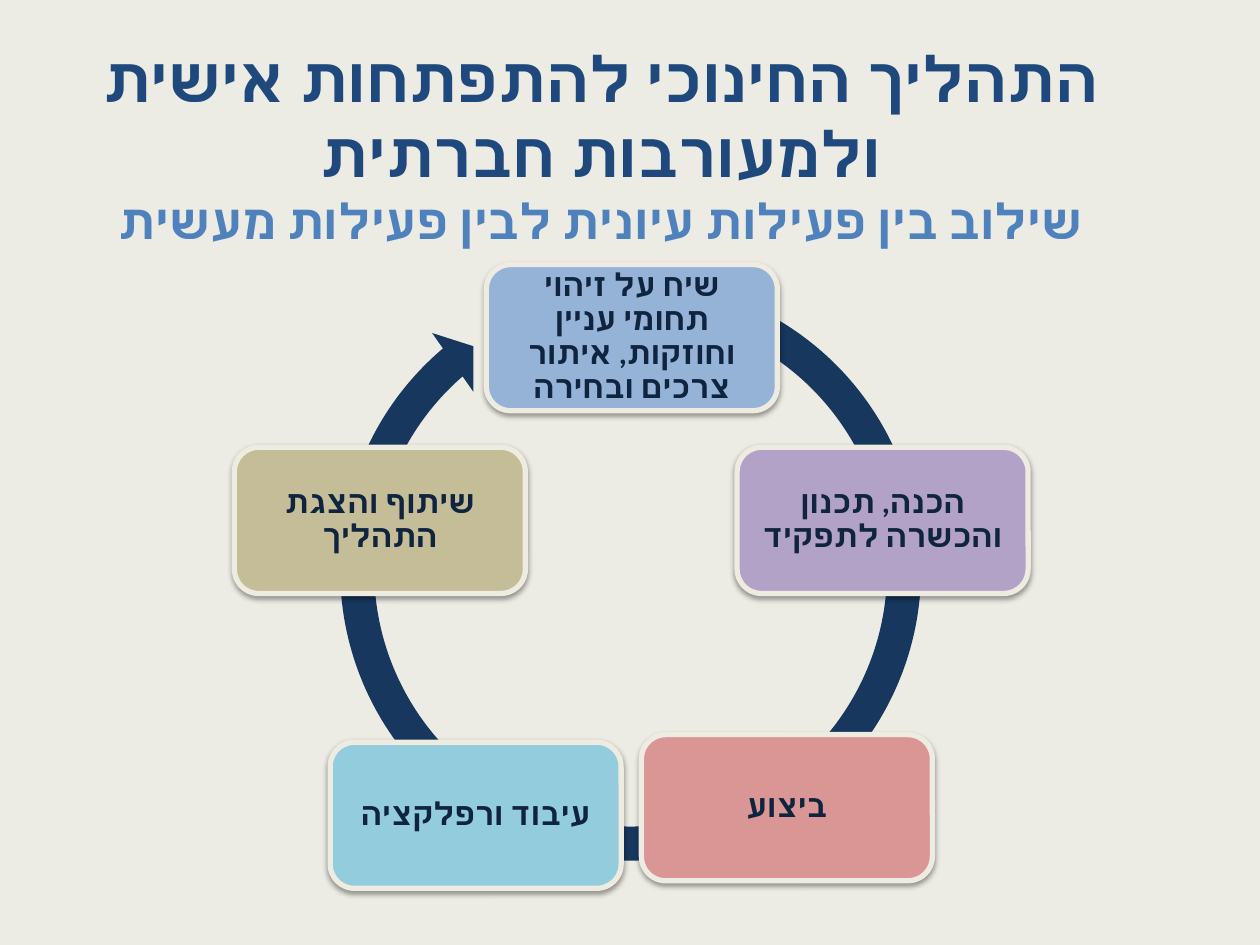
import pptx
import pptx.util
import pptx.oxml
import pptx.oxml.ns
import pptx.dml.color
import pptx.enum.shapes
import pptx.enum.text

INK = {
    "back": "ECEBE4", "head": "1F497D", "sub": "4F81BD", "ring": "17375E",
    "edge": "EEECE1", "text": "0F243E", "blue": "95B3D7", "plum": "B3A2C7",
    "rose": "D99694", "aqua": "93CDDD", "sand": "C4BD97",
}
HEAD = [
    ("התהליך החינוכי להתפתחות אישית ולמעורבות חברתית", 36, "Roboto", "head"),
    ("שילוב בין פעילות עיונית לבין פעילות מעשית", 27.9, "Calibri", "sub"),
]
STEPS = [
    ("שיח על זיהוי תחומי עניין וחוזקות, איתור צרכים ובחירה", "blue", 50.15, 35.73),
    ("הכנה, תכנון והכשרה לתפקיד", "plum", 70.05, 55.07),
    ("ביצוע", "rose", 62.45, 85.47),
    ("עיבוד ורפלקציה", "aqua", 37.75, 86.27),
    ("שיתוף והצגת התהליך", "sand", 30.15, 55.07),
]
WIDE, HIGH = 10, 7.5
TITLE = (2.7, 11.2, 90, 14.4)
RING = (25.5, 27.6, 49.1, 65.47)
BEND = (0.055, 3.307, 137.657, 173.922, 0.058)
CARD = (23.1, 15.47)
GLOW = (
    '<a:effectLst %s><a:outerShdw blurRad="40000" dist="20000" dir="5400000" '
    'rotWithShape="0"><a:srgbClr val="000000"><a:alpha val="38000"/></a:srgbClr>'
    "</a:outerShdw></a:effectLst>" % pptx.oxml.ns.nsdecls("a")
)
KIND = pptx.enum.shapes.MSO_SHAPE


def tint(key):
    return pptx.dml.color.RGBColor.from_string(INK[key])


def place(left, top, width, height):
    sides = (WIDE, HIGH, WIDE, HIGH)
    return [pptx.util.Inches(part * side / 100)
            for part, side in zip((left, top, width, height), sides)]


def style(para, size, face, key):
    para.alignment = pptx.enum.text.PP_ALIGN.CENTER
    para._p.get_or_add_pPr().set("rtl", "1")
    for run in para.runs:
        font = run.font
        font.size, font.name, font.bold = pptx.util.Pt(size), face, True
        font.color.rgb = tint(key)
        script = pptx.oxml.parse_xml(
            '<a:cs %s typeface="%s"/>' % (pptx.oxml.ns.nsdecls("a"), face))
        run._r.get_or_add_rPr().append(script)


def add_head(slide):
    title = slide.shapes.title
    title.left, title.top, title.width, title.height = place(*TITLE)
    frame = title.text_frame
    frame.auto_size = pptx.enum.text.MSO_AUTO_SIZE.NONE
    frame.vertical_anchor = pptx.enum.text.MSO_ANCHOR.MIDDLE
    frame.margin_bottom = pptx.util.Inches(0.52)
    frame.text = "\n".join(row[0] for row in HEAD)
    for para, row in zip(frame.paragraphs, HEAD):
        style(para, *row[1:])


def add_shape(slide, kind, box, key):
    shape = slide.shapes.add_shape(kind, *place(*box))
    shape.shadow.inherit = False
    shape.fill.solid()
    shape.fill.fore_color.rgb = tint(key)
    return shape


def add_ring(slide):
    ring = add_shape(slide, KIND.CIRCULAR_ARROW, RING, "ring")
    ring.line.fill.background()
    for spot, value in enumerate(BEND):
        ring.adjustments[spot] = value


def add_card(slide, text, key, mid_x, mid_y):
    width, height = CARD
    box = (mid_x - width / 2, mid_y - height / 2, width, height)
    card = add_shape(slide, KIND.ROUNDED_RECTANGLE, box, key)
    card.line.color.rgb = tint("edge")
    card.line.width = pptx.util.Pt(3)
    props = card._element.spPr
    props.replace(props.find(pptx.oxml.ns.qn("a:effectLst")),
                  pptx.oxml.parse_xml(GLOW))
    frame = card.text_frame
    frame.word_wrap = True
    frame.vertical_anchor = pptx.enum.text.MSO_ANCHOR.MIDDLE
    for side in ("left", "right", "top", "bottom"):
        setattr(frame, "margin_" + side, pptx.util.Inches(0.07))
    frame.text = text
    para = frame.paragraphs[0]
    para.line_spacing = 0.9
    style(para, 18, "Calibri", "text")


def main():
    deck = pptx.Presentation()
    deck.slide_width = pptx.util.Inches(WIDE)
    deck.slide_height = pptx.util.Inches(HIGH)
    slide = deck.slides.add_slide(deck.slide_layouts[5])
    slide.background.fill.solid()
    slide.background.fill.fore_color.rgb = tint("back")
    add_head(slide)
    add_ring(slide)
    for step in STEPS:
        add_card(slide, *step)
    deck.save("out.pptx")


if __name__ == "__main__":
    main()
